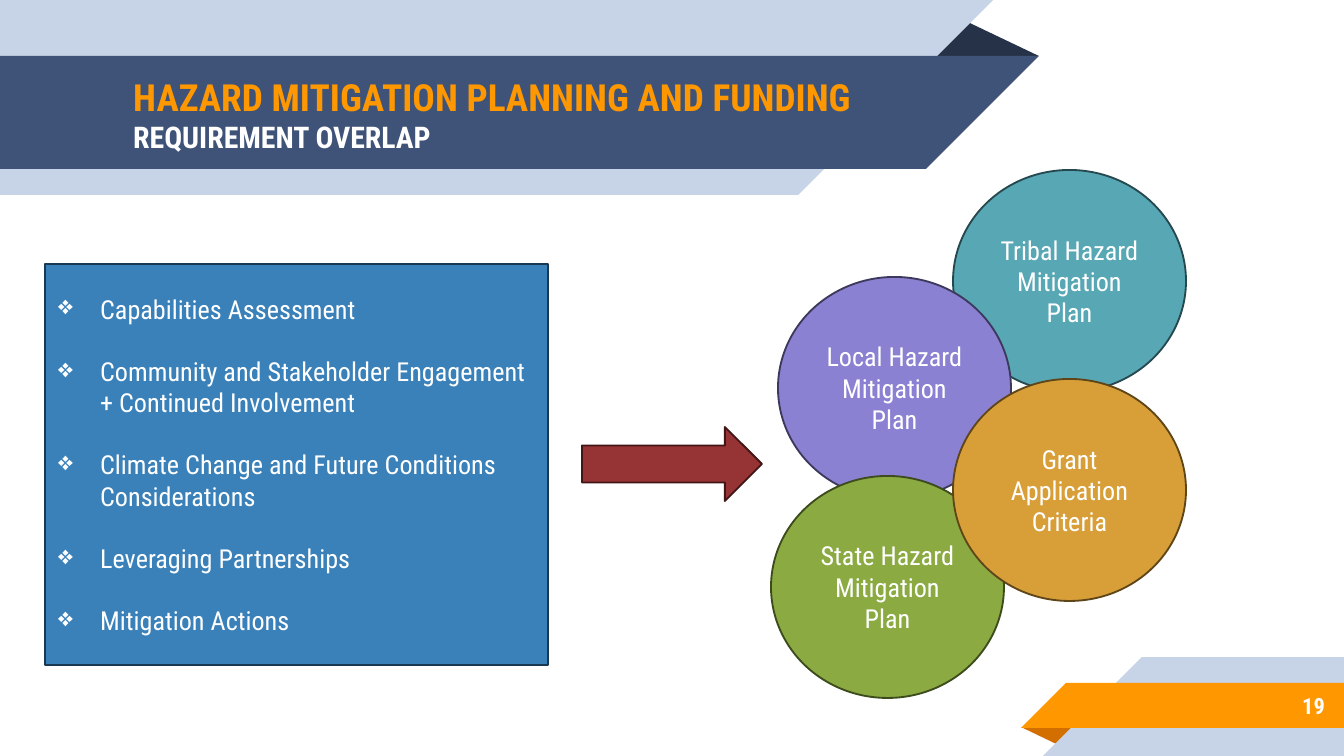
from lxml.etree import SubElement
from pptx import Presentation
from pptx.dml.color import RGBColor
from pptx.enum.shapes import MSO_SHAPE as Shape
from pptx.enum.text import MSO_ANCHOR as Anchor, PP_ALIGN as Align
from pptx.oxml.ns import qn
from pptx.util import Emu, Pt

SLIDE_W, SLIDE_H = 1344, 756
EMU_PER_PX = 914400 / 134.4
FONT = "Roboto Condensed"

WHITE = RGBColor(0xFF, 0xFF, 0xFF)
PALE = RGBColor(0xC7, 0xD3, 0xE6)
NAVY = RGBColor(0x3F, 0x53, 0x78)
NAVY_FOLD = RGBColor(0x26, 0x32, 0x48)
ORANGE = RGBColor(0xFF, 0x98, 0x00)
ORANGE_FOLD = RGBColor(0xD2, 0x6F, 0x00)
BLUE = RGBColor(0x3A, 0x81, 0xBA)
BLUE_EDGE = RGBColor(0x19, 0x39, 0x52)
RED = RGBColor(0x96, 0x33, 0x34)
RED_EDGE = RGBColor(0x42, 0x16, 0x17)
TEAL = RGBColor(0x57, 0xA7, 0xB5)
TEAL_EDGE = RGBColor(0x26, 0x49, 0x4F)
PURPLE = RGBColor(0x8B, 0x81, 0xD2)
PURPLE_EDGE = RGBColor(0x3D, 0x39, 0x5C)
GREEN = RGBColor(0x8B, 0xAB, 0x42)
GREEN_EDGE = RGBColor(0x3D, 0x4B, 0x1D)
GOLD = RGBColor(0xD8, 0x9F, 0x39)
GOLD_EDGE = RGBColor(0x5F, 0x46, 0x19)

REQUIREMENTS = [
    "Capabilities Assessment",
    "Community and Stakeholder Engagement + Continued Involvement",
    "Climate Change and Future Conditions Considerations",
    "Leveraging Partnerships",
    "Mitigation Actions",
]
PLANS = [
    ("Tribal Hazard Mitigation Plan", 953, 170, TEAL, TEAL_EDGE),
    ("Local Hazard Mitigation Plan", 778, 277, PURPLE, PURPLE_EDGE),
    ("State Hazard Mitigation Plan", 771, 476, GREEN, GREEN_EDGE),
    ("Grant Application Criteria", 953, 379, GOLD, GOLD_EDGE),
]
PLAN_W, PLAN_H = 233, 222


def px(length):
    """Turn pixels into EMU."""
    return Emu(round(length * EMU_PER_PX))


def add_filled(slide, preset, box, fill, edge=None, rotation=0):
    """Add a flat preset shape with an optional outline."""
    shape = slide.shapes.add_shape(preset, *map(px, box))
    shape.shadow.inherit = False
    shape.rotation = rotation
    shape.fill.solid()
    shape.fill.fore_color.rgb = fill
    if edge is None:
        shape.line.fill.background()
    else:
        shape.line.color.rgb = edge
        shape.line.width = Pt(1)
    return shape


def add_fold(slide, box, fill, rotation=0):
    """Add the shaded triangle behind a folded ribbon."""
    fold = add_filled(slide, Shape.ISOSCELES_TRIANGLE, box, fill, rotation=rotation)
    fold.adjustments[0] = 0.32


def add_left_ribbon(slide, top, width, height, fill):
    """Add a ribbon from the left edge whose right end slants."""
    add_filled(slide, Shape.RECTANGLE, (0, top, width, height), fill)
    add_filled(slide, Shape.RIGHT_TRIANGLE, (width, top, height, height), fill, rotation=90)


def add_right_ribbon(slide, top, width, height, fill):
    """Add a ribbon from the right edge whose left end slants."""
    left = SLIDE_W - width
    add_filled(slide, Shape.RECTANGLE, (left, top, width, height), fill)
    add_filled(slide, Shape.RIGHT_TRIANGLE, (left - height, top, height, height), fill, rotation=270)


def style_run(run, size, color=WHITE, bold=False):
    """Set the font of one run."""
    run.font.name = FONT
    run.font.size = Pt(size)
    run.font.bold = bold
    run.font.color.rgb = color


def add_label(slide, box, text, align, styles):
    """Add a wrapped text box with one style for each run."""
    frame = slide.shapes.add_textbox(*map(px, box)).text_frame
    frame.word_wrap = True
    frame.vertical_anchor = Anchor.MIDDLE
    frame.margin_top = frame.margin_bottom = px(13)
    frame.text = text
    paragraph = frame.paragraphs[0]
    paragraph.alignment = align
    for run, style in zip(paragraph.runs, styles):
        style_run(run, *style)


def add_bullet(paragraph):
    """Give a paragraph a white diamond bullet with a hanging indent."""
    properties = paragraph._p.get_or_add_pPr()
    properties.set("marL", str(px(42)))
    properties.set("indent", str(px(-42)))
    color = SubElement(properties, qn("a:buClr"))
    SubElement(color, qn("a:srgbClr"), val=str(WHITE))
    SubElement(properties, qn("a:buChar"), char="❖")


def add_requirements(slide):
    """Add the panel that lists the shared requirements."""
    panel = add_filled(slide, Shape.RECTANGLE, (45, 264, 503, 401), BLUE, BLUE_EDGE)
    frame = panel.text_frame
    frame.word_wrap = True
    frame.vertical_anchor = Anchor.MIDDLE
    frame.text = "\n".join(REQUIREMENTS)
    for index, paragraph in enumerate(frame.paragraphs):
        add_bullet(paragraph)
        paragraph.alignment = Align.LEFT
        if index:
            paragraph.space_before = Pt(16.5)
        style_run(paragraph.runs[0], 14)


def add_plan(slide, name, left, top, fill, edge):
    """Add one circle of the overlapping plans."""
    plan = add_filled(slide, Shape.OVAL, (left, top, PLAN_W, PLAN_H), fill, edge)
    frame = plan.text_frame
    frame.word_wrap = True
    frame.vertical_anchor = Anchor.MIDDLE
    frame.text = name
    paragraph = frame.paragraphs[0]
    paragraph.alignment = Align.CENTER
    style_run(paragraph.runs[0], 14)


def main():
    """Build and save the slide."""
    deck = Presentation()
    deck.slide_width, deck.slide_height = px(SLIDE_W), px(SLIDE_H)
    slide = deck.slides.add_slide(deck.slide_layouts[6])

    add_fold(slide, (925, 19, 114, 37), NAVY_FOLD)
    add_left_ribbon(slide, 0, 798, 195, PALE)
    add_left_ribbon(slide, 56, 926, 113, NAVY)
    add_fold(slide, (1021, 727, 58, 19), ORANGE_FOLD, rotation=180)
    add_right_ribbon(slide, 657, 202, 99, PALE)
    add_right_ribbon(slide, 683, 278, 45, ORANGE)

    add_label(slide, (120, 58, 773, 113),
              "HAZARD MITIGATION PLANNING AND FUNDING\vREQUIREMENT OVERLAP",
              Align.LEFT, [(20, ORANGE, True), (16, WHITE, True)])
    add_label(slide, (1119, 682, 219, 47), "19", Align.RIGHT, [(12, WHITE, True)])

    add_requirements(slide)
    add_filled(slide, Shape.RIGHT_ARROW, (582, 427, 180, 74), RED, RED_EDGE)
    for plan in PLANS:
        add_plan(slide, *plan)
    deck.save("out.pptx")


if __name__ == "__main__":
    main()
